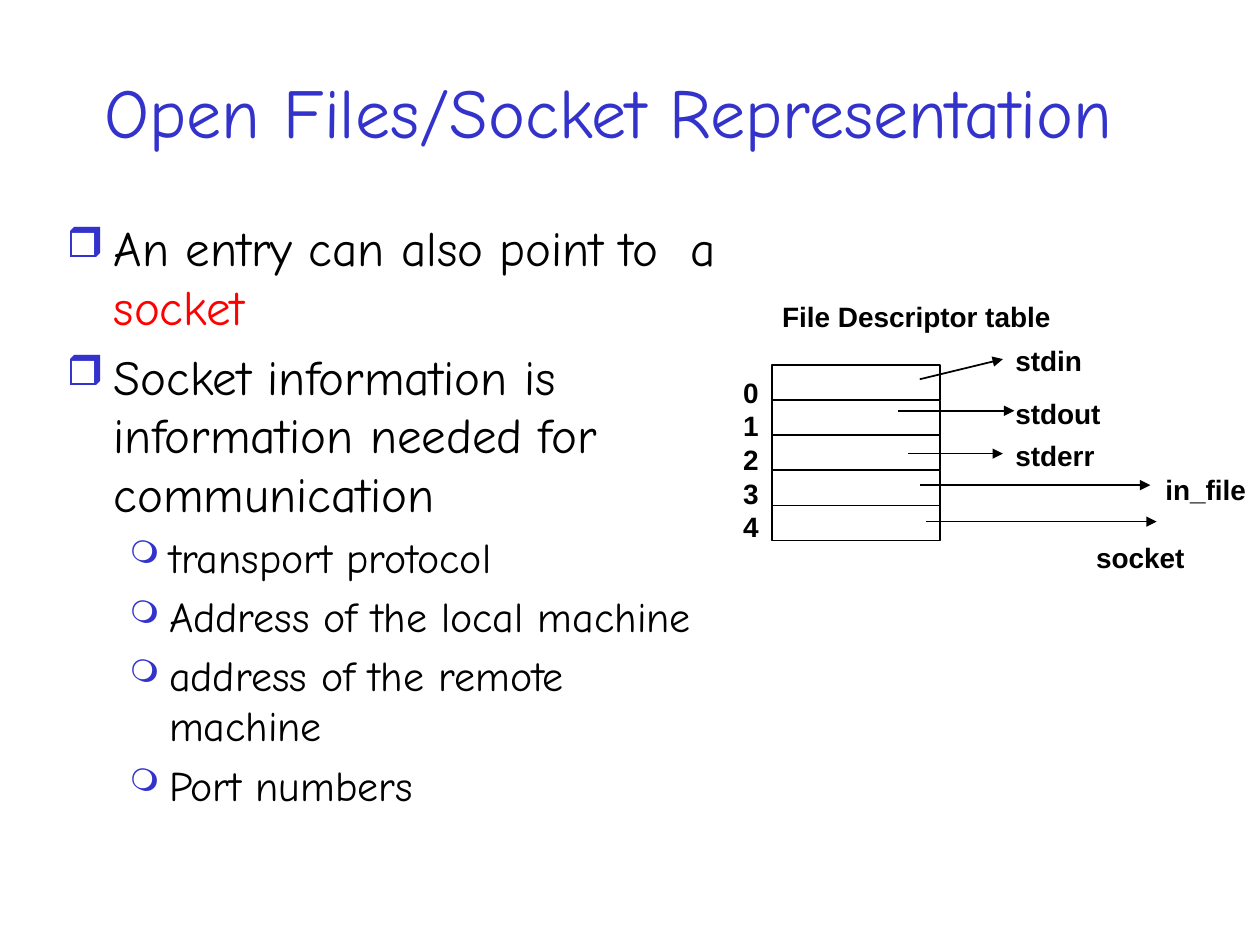
"""Slide on how open files and sockets appear in the file descriptor table."""
from typing import NamedTuple

from lxml.etree import SubElement
from pptx import Presentation
from pptx.dml.color import RGBColor
from pptx.enum.shapes import MSO_CONNECTOR, MSO_SHAPE
from pptx.enum.text import MSO_ANCHOR, PP_ALIGN
from pptx.oxml.ns import qn
from pptx.util import Inches, Pt

BLUE = RGBColor(0x33, 0x33, 0xCC)
RED = RGBColor(0xFF, 0x00, 0x00)
BLACK = RGBColor(0x00, 0x00, 0x00)
WHITE = RGBColor(0xFF, 0xFF, 0xFF)

COLUMNS, ROWS = 100, 75
WIDTH, HEIGHT = Inches(10), Inches(7.5)


class Area(NamedTuple):
    """Place and size in grid columns and rows."""
    column: float
    row: float
    columns: float
    rows: float


class Level(NamedTuple):
    """Look of one outline level; margin and hanging in columns."""
    depth: int
    size: int
    before: int
    margin: float
    hanging: float
    bullet: str
    bullet_percent: int


class Point(NamedTuple):
    """One outline point, as coloured pieces of text."""
    level: Level
    pieces: tuple


class Label(NamedTuple):
    """Bold caption of the diagram."""
    area: Area
    lines: tuple


class Pointer(NamedTuple):
    """Arrow from a table entry to what it refers to."""
    start: tuple
    end: tuple


MAIN = Level(0, 28, 6, 3.75, 3.75, "❒", 85)
DETAIL = Level(1, 24, 5, 8.13, 3.13, "❍", 75)

POINTS = (
    Point(MAIN, (("An entry can also point to  a ", BLACK), ("socket", RED))),
    Point(MAIN, (("Socket information is information needed for communication", BLACK),)),
    *(Point(DETAIL, ((detail, BLACK),)) for detail in (
        "transport protocol",
        "Address of the local machine",
        "address of the remote machine",
        "Port numbers",
    )),
)

ENTRY_COUNT = 5
FIRST_ENTRY = Area(61.3, 29, 13.3, 2.78)

LABELS = (
    Label(Area(58, 29.3, 3.2, 14.4), tuple(map(str, range(ENTRY_COUNT)))),
    Label(Area(61.1, 23.3, 23.6, 3.7), ("File Descriptor table",)),
    Label(Area(79.6, 26.8, 7.3, 3.7), ("stdin",)),
    Label(Area(79.6, 31, 8.8, 3.7), ("stdout",)),
    Label(Area(79.6, 34.3, 8.3, 3.7), ("stderr",)),
    Label(Area(91.5, 37, 8.5, 3.7), ("in_file",)),
    Label(Area(86, 42.4, 9.1, 3.7), ("socket",)),
)

POINTERS = (
    Pointer((73, 30.1), (79.6, 28.5)),
    Pointer((71.3, 32.6), (80.5, 32.6)),
    Pointer((72.1, 36), (79.6, 36)),
    Pointer((73, 38.5), (91.3, 38.5)),
    Pointer((73.5, 41.4), (91.8, 41.4)),
)


def across(columns: float) -> int:
    """Length of a number of grid columns."""
    return round(WIDTH * columns / COLUMNS)


def down(rows: float) -> int:
    """Length of a number of grid rows."""
    return round(HEIGHT * rows / ROWS)


def place(area: Area) -> tuple:
    """Left, top, width and height of an area."""
    return across(area.column), down(area.row), across(area.columns), down(area.rows)


def apply(target, formats: dict) -> None:
    """Set each format value on the target."""
    for attribute, setting in formats.items():
        setattr(target, attribute, setting)


def write(paragraph, wording: str, color: RGBColor, formats: dict) -> None:
    """Add a formatted run to a paragraph."""
    run = paragraph.add_run()
    run.text = wording
    apply(run.font, formats)
    run.font.color.rgb = color


def add_frame(slide, area: Area, formats: dict):
    """Add a text box and return its text frame."""
    frame = slide.shapes.add_textbox(*place(area)).text_frame
    apply(frame, formats)
    return frame


def paragraph_at(frame, index: int):
    """Return the first paragraph or add the next one."""
    return frame.add_paragraph() if index else frame.paragraphs[0]


def set_bullet(paragraph, level: Level) -> None:
    """Give a paragraph the hanging indent and bullet of its level."""
    properties = paragraph._p.get_or_add_pPr()
    properties.set("marL", str(across(level.margin)))
    properties.set("indent", str(-across(level.hanging)))
    tint = SubElement(properties, qn("a:buClr"))
    SubElement(tint, qn("a:srgbClr"), val=str(BLUE))
    SubElement(properties, qn("a:buSzPct"), val=str(level.bullet_percent * 1000))
    SubElement(properties, qn("a:buChar"), char=level.bullet)


def draw_title(slide, wording: str) -> None:
    """Draw the slide title."""
    frame = add_frame(slide, Area(5.8, 2.5, 85, 12.5),
                      {"word_wrap": True, "vertical_anchor": MSO_ANCHOR.MIDDLE})
    heading = frame.paragraphs[0]
    heading.alignment = PP_ALIGN.CENTER
    write(heading, wording, BLUE, {"name": "Comic Neue", "size": Pt(40)})


def draw_outline(slide, points: tuple) -> None:
    """Draw the bulleted points."""
    frame = add_frame(slide, Area(4.3, 16.8, 53.8, 50.8), {"word_wrap": True})
    for index, (level, pieces) in enumerate(points):
        paragraph = paragraph_at(frame, index)
        apply(paragraph, {"level": level.depth, "space_before": Pt(level.before)})
        set_bullet(paragraph, level)
        for wording, color in pieces:
            write(paragraph, wording, color, {"name": "Comic Neue", "size": Pt(level.size)})


def draw_entry(slide, index: int) -> None:
    """Draw one entry of the descriptor table."""
    area = FIRST_ENTRY._replace(row=FIRST_ENTRY.row + index * FIRST_ENTRY.rows)
    entry = slide.shapes.add_shape(MSO_SHAPE.RECTANGLE, *place(area))
    entry.shadow.inherit = False
    entry.fill.solid()
    entry.fill.fore_color.rgb = WHITE
    entry.line.color.rgb = BLACK
    entry.line.width = Pt(1)


def draw_label(slide, label: Label) -> None:
    """Draw a caption, one paragraph a line."""
    frame = add_frame(slide, label.area, {"word_wrap": False})
    for index, wording in enumerate(label.lines):
        paragraph = paragraph_at(frame, index)
        paragraph.line_spacing = Pt(19.2)
        write(paragraph, wording, BLACK, {"name": "Arial", "size": Pt(16), "bold": True})


def draw_pointer(slide, pointer: Pointer) -> None:
    """Draw an arrow."""
    (column, row), (end_column, end_row) = pointer
    arrow = slide.shapes.add_connector(MSO_CONNECTOR.STRAIGHT, across(column), down(row),
                                       across(end_column), down(end_row))
    arrow.line.color.rgb = BLACK
    arrow.line.width = Pt(1)
    SubElement(arrow.line._get_or_add_ln(), qn("a:tailEnd"), type="triangle")
    SubElement(arrow._element.spPr, qn("a:effectLst"))


def main() -> None:
    """Build and save the slide."""
    deck = Presentation()
    apply(deck, {"slide_width": WIDTH, "slide_height": HEIGHT})
    slide = deck.slides.add_slide(deck.slide_layouts[6])
    draw_title(slide, "Open Files/Socket Representation")
    draw_outline(slide, POINTS)
    for index in range(ENTRY_COUNT):
        draw_entry(slide, index)
    for pointer in POINTERS:
        draw_pointer(slide, pointer)
    for label in LABELS:
        draw_label(slide, label)
    deck.save("out.pptx")


if __name__ == "__main__":
    main()
